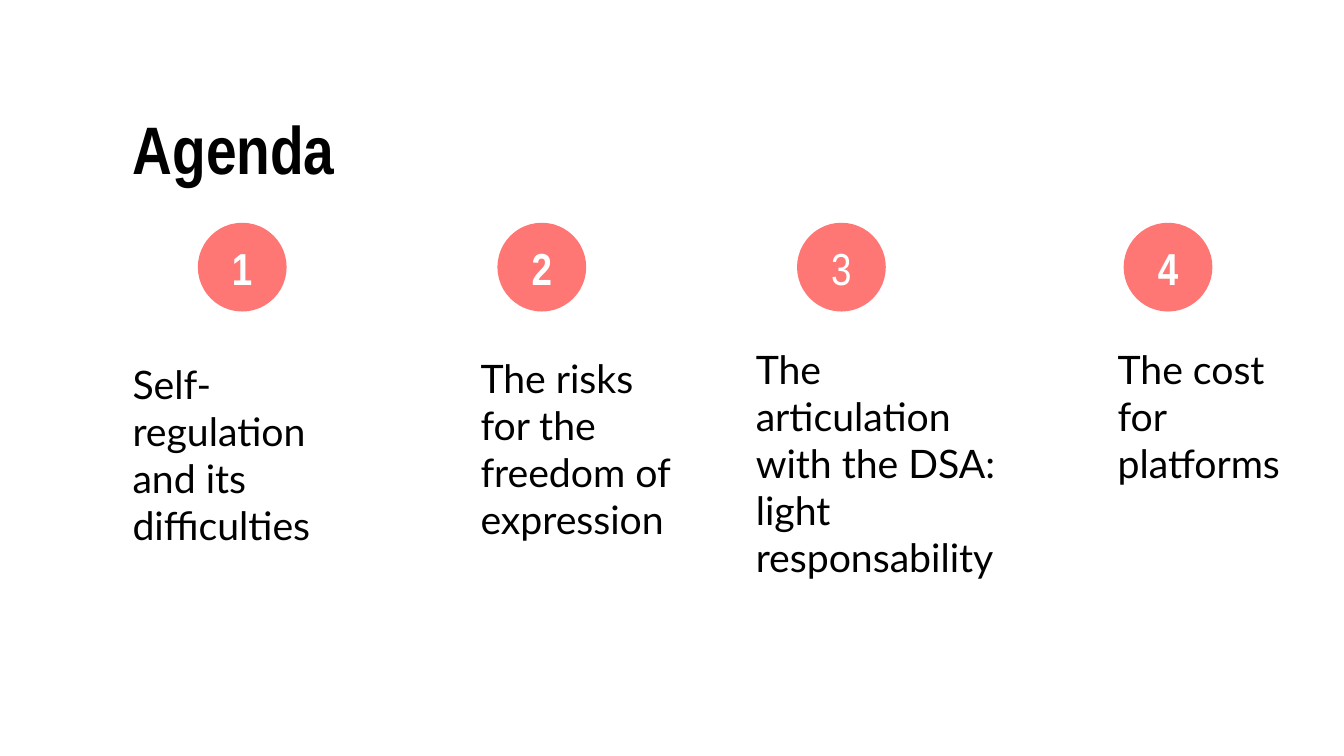
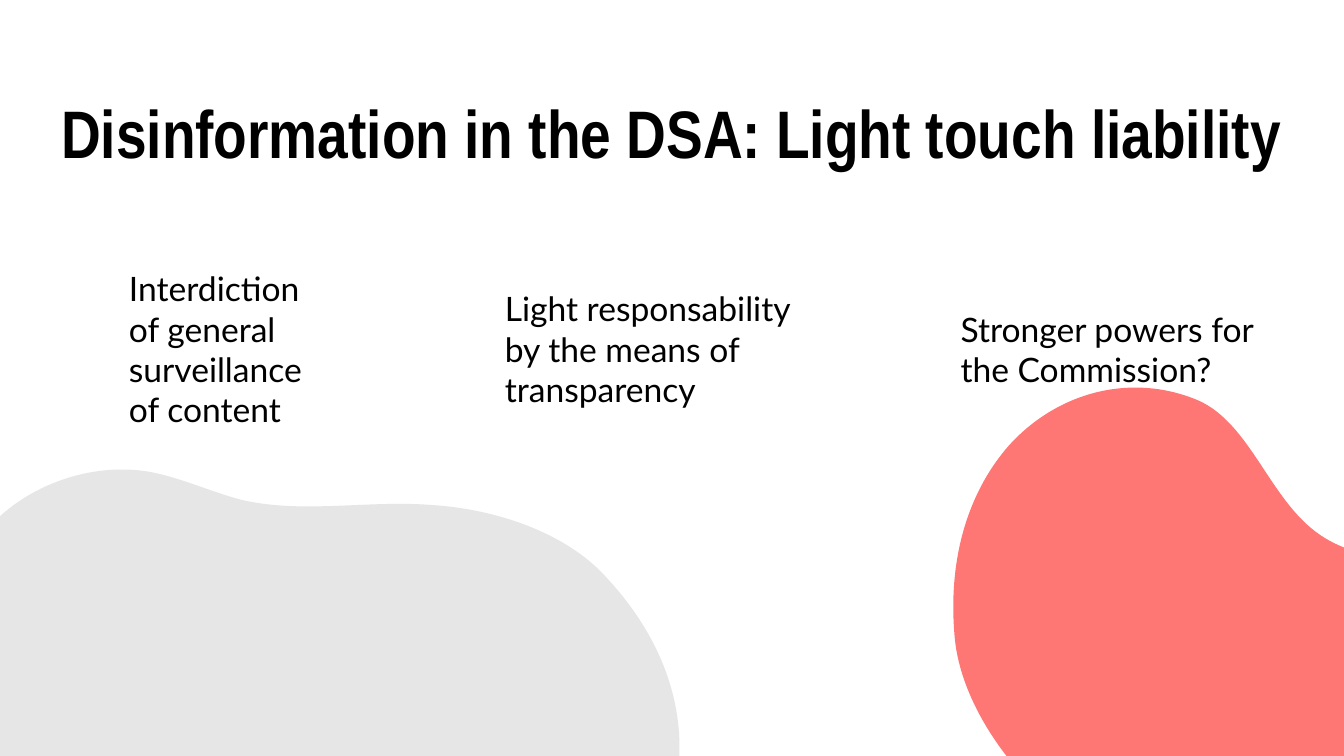
from pptx import Presentation
from pptx.dml.color import RGBColor
from pptx.enum import shapes, text
from pptx.oxml import ns, xmlchemy
from pptx.util import Pt

BLACK = RGBColor(0x00, 0x00, 0x00)
WHITE = RGBColor(0xFF, 0xFF, 0xFF)
CORAL = RGBColor(0xFF, 0x77, 0x74)
GREY = RGBColor(0xE6, 0xE6, 0xE6)
HEAD_FONT, BODY_FONT = "Arial Narrow", "Lato"
LEFT, CENTER = text.PP_ALIGN.LEFT, text.PP_ALIGN.CENTER
TOP, MIDDLE = text.MSO_ANCHOR.TOP, text.MSO_ANCHOR.MIDDLE

TITLE_ONLY = 5
CIRCLE_TOP, CIRCLE_SIZE = 159.1, 63.4
BLOB_UNIT = 0.72  # points per unit of the outlines below

# number, bold, circle left, text, text box (left, top, width, height)
AGENDA = [
    ("1", True, 141.3, "Self-regulation and its difficulties", (87.6, 253.8, 188.6, 143)),
    ("2", True, 355.3, "The risks for the freedom of expression", (336.2, 249.5, 158.4, 143)),
    ("3", False, 569.3, "The articulation with the DSA: light responsability",
     (532.8, 243, 198.7, 177)),
    ("4", True, 802.6, "The cost for platforms", (791.3, 243, 152, 109)),
]

DSA_POINTS = [
    ("Interdiction of general surveillance of content", (85, 188, 162, 124)),
    ("Light responsability by the means of transparency", (353.5, 202.3, 248.4, 94.5)),
    ("Stronger powers for the Commission?", (679, 217, 248.4, 65.5)),
]

# Start point, then cubic curves: two control points and an end point each
GREY_BLOB = [
    (674, 748),
    (676, 691), (654, 627), (597, 568), (558, 528), (492, 505), (428, 501),
    (365, 496), (301, 510), (240, 496), (209, 488), (180, 474), (148, 468),
    (88, 458), (27, 483), (-8, 520), (-43, 558), (-56, 604), (-63, 650),
    (-66, 669), (-69, 687), (-69, 706), (-71, 739), (-68, 772), (-58, 804),
    (-41, 855), (-5, 904), (52, 933), (109, 963), (188, 970), (245, 944),
    (291, 923), (324, 881), (379, 875), (441, 869), (507, 919), (563, 900),
    (627, 878), (671, 819), (674, 748),
]
CORAL_BLOB = [
    (1001, 442),
    (964, 484), (940, 548), (947, 630), (951, 685), (987, 745), (1034, 789),
    (1080, 832), (1138, 862), (1176, 912), (1196, 938), (1208, 967), (1229, 992),
    (1269, 1038), (1333, 1057), (1383, 1051), (1434, 1045), (1473, 1017), (1508, 986),
    (1522, 974), (1536, 961), (1549, 947), (1571, 922), (1589, 895), (1602, 864),
    (1621, 814), (1624, 753), (1599, 694), (1574, 635), (1518, 579), (1458, 563),
    (1408, 550), (1356, 562), (1310, 531), (1258, 496), (1240, 415), (1183, 395),
    (1120, 371), (1049, 389), (1001, 442),
]


def write(sp, content, *, size, font=BODY_FONT, color=BLACK, bold=False,
          align=LEFT, anchor=TOP, inset=(7.2, 3.6)):
    """Fill a shape with one formatted paragraph; inset is (sides, top and bottom)."""
    tf = sp.text_frame
    tf.word_wrap = True
    tf.auto_size = text.MSO_AUTO_SIZE.NONE
    tf.vertical_anchor = anchor
    tf.margin_left = tf.margin_right = Pt(inset[0])
    tf.margin_top = tf.margin_bottom = Pt(inset[1])
    p = tf.paragraphs[0]
    p.alignment = align
    r = p.add_run()
    r.text = content
    r.font.name, r.font.size, r.font.bold = font, Pt(size), bold
    r.font.color.rgb = color


def paint(sp, color):
    sp.shadow.inherit = False
    sp.fill.solid()
    sp.fill.fore_color.rgb = color
    sp.line.fill.background()


def add_titled_slide(prs, title, box, **fmt):
    s = prs.slides.add_slide(prs.slide_layouts[TITLE_ONLY])
    sp = s.shapes.title
    sp.left, sp.top, sp.width, sp.height = map(Pt, box)
    write(sp, title, size=48, font=HEAD_FONT, bold=True, **fmt)
    return s


def add_text(s, content, box, size):
    write(s.shapes.add_textbox(*map(Pt, box)), content, size=size)


def add_number(s, number, left, bold):
    sp = s.shapes.add_shape(shapes.MSO_SHAPE.OVAL, Pt(left), Pt(CIRCLE_TOP),
                            Pt(CIRCLE_SIZE), Pt(CIRCLE_SIZE))
    paint(sp, CORAL)
    write(sp, number, size=32, font=HEAD_FONT, color=WHITE, bold=bold,
          align=CENTER, anchor=MIDDLE, inset=(9.4, 9.4))


def curve_outline(sp):
    """Turn each three line segments of a freeform into one cubic Bézier curve."""
    lines = list(sp.element.iter(ns.qn("a:lnTo")))
    for first, second, third in zip(*[iter(lines)] * 3):
        curve = xmlchemy.OxmlElement("a:cubicBezTo")
        first.addprevious(curve)
        for line in (first, second, third):
            curve.append(line[0])
            line.getparent().remove(line)


def add_blob(s, outline, color):
    start, *rest = [(Pt(x * BLOB_UNIT), Pt(y * BLOB_UNIT)) for x, y in outline]
    builder = s.shapes.build_freeform(*start)
    builder.add_line_segments(rest, close=True)
    sp = builder.convert_to_shape()
    curve_outline(sp)
    paint(sp, color)


def add_agenda(prs):
    s = add_titled_slide(prs, "Agenda", (87.6, 72.7, 267.8, 65.5))
    for number, bold, left, content, box in AGENDA:
        add_number(s, number, left, bold)
        add_text(s, content, box, 28)


def add_dsa(prs):
    s = add_titled_slide(prs, "Disinformation in the DSA: Light touch liability",
                         (32.8, 49.7, 894.2, 88.6),
                         align=CENTER, anchor=MIDDLE, inset=(7.2, 7.2))
    for content, box in DSA_POINTS:
        add_text(s, content, box, 24)
    add_blob(s, GREY_BLOB, GREY)
    add_blob(s, CORAL_BLOB, CORAL)


def main():
    prs = Presentation()
    prs.slide_width, prs.slide_height = Pt(960), Pt(540)
    add_agenda(prs)
    add_dsa(prs)
    prs.save("out.pptx")


if __name__ == "__main__":
    main()
